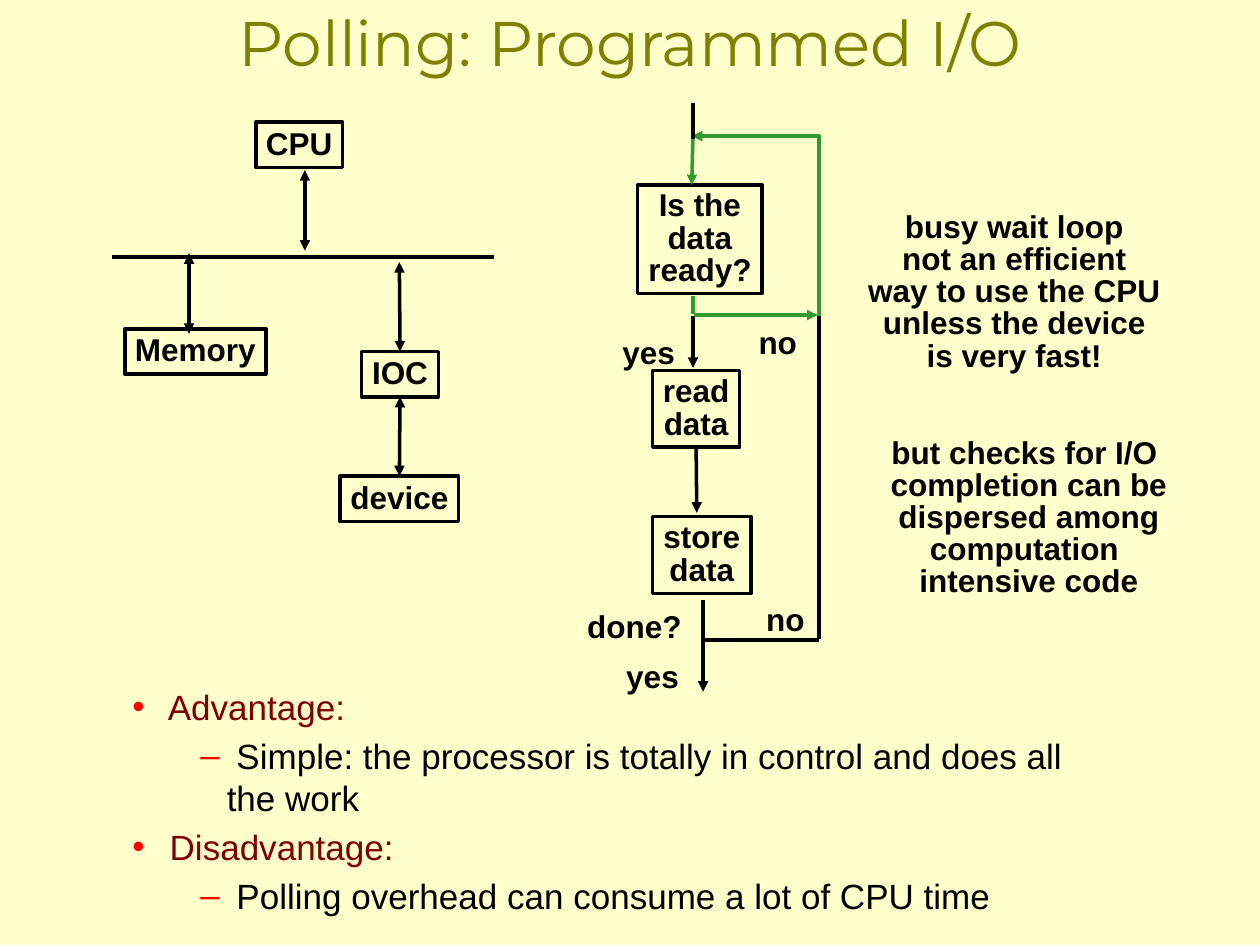
from lxml import etree
from pptx import Presentation, util as u
from pptx.dml.color import RGBColor
from pptx.enum import shapes, text
from pptx.oxml import ns

WIDTH, HEIGHT = u.Inches(10), u.Inches(7.5)
COLUMN, ROW = WIDTH / 100, HEIGHT / 75
CREAM = RGBColor(0xFF, 0xFF, 0xCC)
OLIVE = RGBColor(0x80, 0x80, 0x00)
MAROON = RGBColor(0x80, 0x00, 0x00)
BLACK = RGBColor(0x00, 0x00, 0x00)
GREEN = RGBColor(0x33, 0x99, 0x33)
RED = RGBColor(0xFF, 0x00, 0x00)
TOP, BOTTOM = 0, 2


def place(left, top, width, height):
    return [round(n) for n in (left * COLUMN, top * ROW, width * COLUMN, height * ROW)]


def add_child(parent, tag, **attributes):
    return etree.SubElement(parent, ns.qn(tag), attributes)


def write(frame, lines, size=18, font="Arial", color=BLACK, bold=True,
          align=text.PP_ALIGN.CENTER, spacing=0.85, wrap=False,
          anchor=text.MSO_ANCHOR.TOP):
    frame.margin_left = frame.margin_right = u.Inches(0.07)
    frame.margin_top = frame.margin_bottom = u.Inches(0.03)
    frame.word_wrap = wrap
    frame.vertical_anchor = anchor
    frame.auto_size = text.MSO_AUTO_SIZE.SHAPE_TO_FIT_TEXT
    for index, line in enumerate(lines):
        paragraph = frame.add_paragraph() if index else frame.paragraphs[0]
        paragraph.alignment, paragraph.line_spacing = align, spacing
        run = paragraph.add_run()
        run.text = line
        run.font.size, run.font.name, run.font.bold = u.Pt(size), font, bold
        run.font.color.rgb = color


def label(slide, area, lines, **style):
    area_box = slide.shapes.add_textbox(*place(*area))
    write(area_box.text_frame, lines, **style)
    return area_box.text_frame


def block(slide, area, lines, spacing):
    unit = slide.shapes.add_shape(shapes.MSO_SHAPE.RECTANGLE, *place(*area))
    unit.shadow.inherit = False
    unit.fill.background()
    unit.line.color.rgb, unit.line.width = BLACK, u.Pt(2)
    write(unit.text_frame, lines, spacing=spacing, anchor=text.MSO_ANCHOR.MIDDLE)
    return unit


def wire(slide, start, end, color=BLACK, heads=(), source=None, target=None):
    link = slide.shapes.add_connector(
        shapes.MSO_CONNECTOR.STRAIGHT, *place(*start, *end))
    if source:
        link.begin_connect(source, BOTTOM)
    if target:
        link.end_connect(target, TOP)
    link.line.color.rgb, link.line.width = color, u.Pt(2)
    for head in heads:
        add_child(link.line._get_or_add_ln(), head, type="triangle")
    add_child(link._element.spPr, "a:effectLst")


def bullet(paragraph, mark, level, margin, hanging, color):
    paragraph.level = level
    paragraph.space_before = u.Pt(4)
    paragraph.runs[0].font.color.rgb = color
    properties = paragraph._p.get_or_add_pPr()
    properties.set("marL", str(u.Inches(margin)))
    properties.set("indent", str(-u.Inches(hanging)))
    add_child(add_child(properties, "a:buClr"), "a:srgbClr", val=str(RED))
    add_child(properties, "a:buFont", typeface="Arial")
    add_child(properties, "a:buChar", char=mark)


def draw_bus(slide):
    both = ("a:headEnd", "a:tailEnd")
    block(slide, (20.3, 9.7, 6.9, 3.6), ["CPU"], 0.92)
    ioc = block(slide, (28.7, 27.9, 6.1, 3.6), ["IOC"], 0.92)
    device = block(slide, (27, 37.8, 9.4, 3.6), ["device"], 0.92)
    block(slide, (9.9, 26.1, 11.2, 3.6), ["Memory"], 0.92)
    wire(slide, (8.9, 20.4), (39.2, 20.4))
    wire(slide, (24.2, 13.5), (24.2, 19.9), heads=both)
    wire(slide, (15, 20.1), (15, 26.5), heads=both)
    wire(slide, (31.7, 20.8), (31.7, 27.4), heads=both, target=ioc)
    wire(slide, (31.7, 31.8), (31.7, 38.2), heads=both, source=ioc, target=device)


def draw_flow(slide):
    arrow = ("a:tailEnd",)
    block(slide, (50.6, 14.7, 9.9, 8.6), ["Is the", "data", "ready?"], 0.86)
    read = block(slide, (51.8, 29.4, 6.9, 6.1), ["read", "data"], 0.88)
    block(slide, (51.8, 41, 7.8, 6.1), ["store", "data"], 0.88)
    wire(slide, (55, 25.1), (55, 29.2), heads=arrow)
    wire(slide, (55.3, 35.7), (55.3, 40.7), heads=arrow, source=read)
    wire(slide, (55, 10.7), (54.9, 14.7), GREEN, arrow)
    wire(slide, (55.8, 50.8), (65, 50.8))
    wire(slide, (65, 25.1), (65, 10.7), GREEN)
    wire(slide, (65.1, 10.8), (54.9, 10.8), GREEN, arrow)
    wire(slide, (55.1, 25), (64.9, 25), GREEN, arrow)
    wire(slide, (55.8, 47.6), (55.8, 54.9), heads=arrow)
    wire(slide, (65, 25.1), (65, 50.7))
    wire(slide, (55, 23.5), (55, 24.9), GREEN)
    wire(slide, (55, 11), (55, 8.2))
    for answer, left, top, width in (
            ("yes", 48.7, 26.6, 5.8), ("no", 59.5, 25.8, 4.8),
            ("done?", 45.9, 48.3, 9.2), ("no", 60.1, 47.8, 4.8),
            ("yes", 49, 52.3, 5.8)):
        label(slide, (left, top, width, 3.1), [answer], align=text.PP_ALIGN.LEFT)


def draw_remarks(slide):
    label(slide, (68, 16.6, 25, 13.3),
          ["busy wait loop", "not an efficient", "way to use the CPU",
           "unless the device", "is very fast!"])
    label(slide, (69.4, 34.5, 24.5, 13.3),
          ["but checks for I/O ", "completion can be", "dispersed among",
           "computation ", "intensive code"])


def draw_summary(slide):
    points = label(
        slide, (9.8, 54.1, 77.6, 19.2),
        [" Advantage:",
         " Simple: the processor is totally in control and does all the work",
         " Disadvantage:",
         " Polling overhead can consume a lot of CPU time"],
        size=20, bold=False, align=text.PP_ALIGN.LEFT, spacing=1, wrap=True)
    styles = (("•", 0, 0.22, 0.22, MAROON), ("–", 1, 0.75, 0.21, BLACK))
    for index, paragraph in enumerate(points.paragraphs):
        bullet(paragraph, *styles[index % 2])


def main():
    deck = Presentation()
    deck.slide_width, deck.slide_height = WIDTH, HEIGHT
    slide = deck.slides.add_slide(deck.slide_layouts[6])
    slide.background.fill.solid()
    slide.background.fill.fore_color.rgb = CREAM
    label(slide, (0, 0, 100, 6.6), ["Polling: Programmed I/O"], size=36,
          font="Montserrat", color=OLIVE, bold=False, spacing=1, wrap=True)
    draw_summary(slide)
    draw_bus(slide)
    draw_flow(slide)
    draw_remarks(slide)
    deck.save("out.pptx")


if __name__ == "__main__":
    main()
